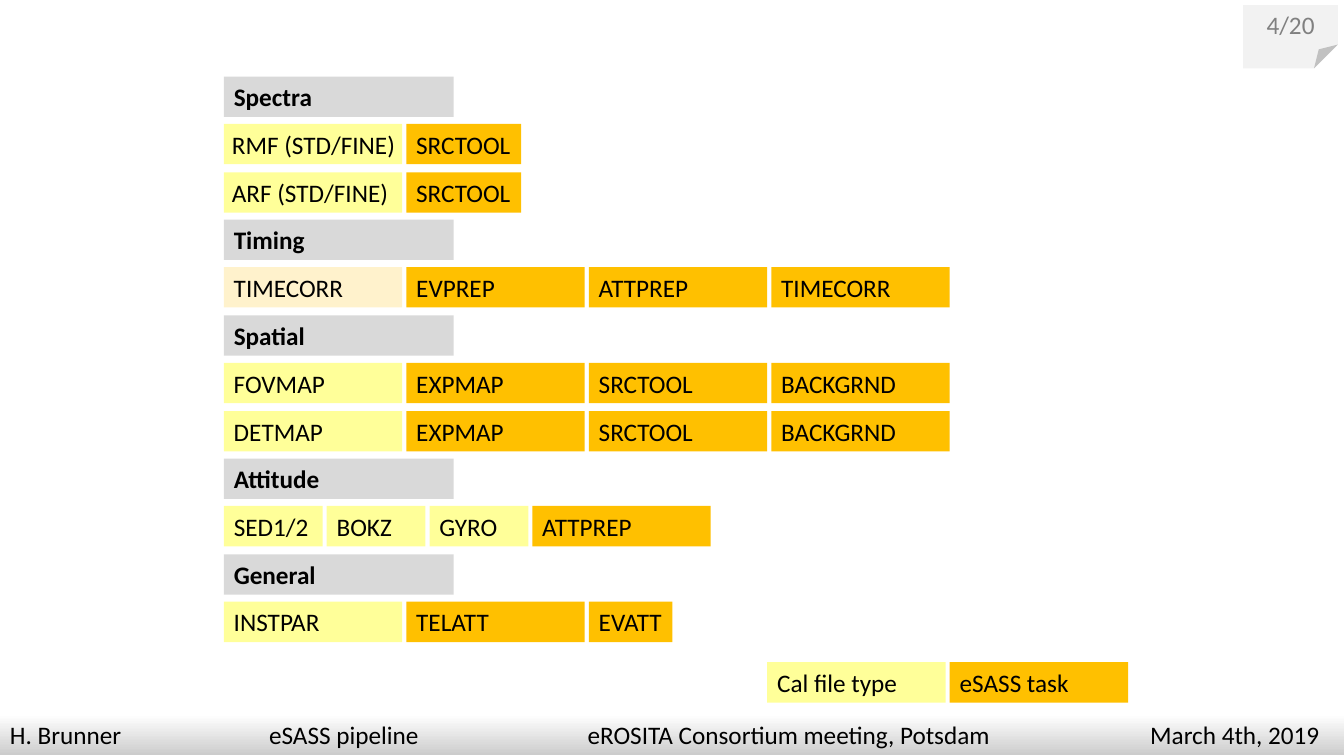
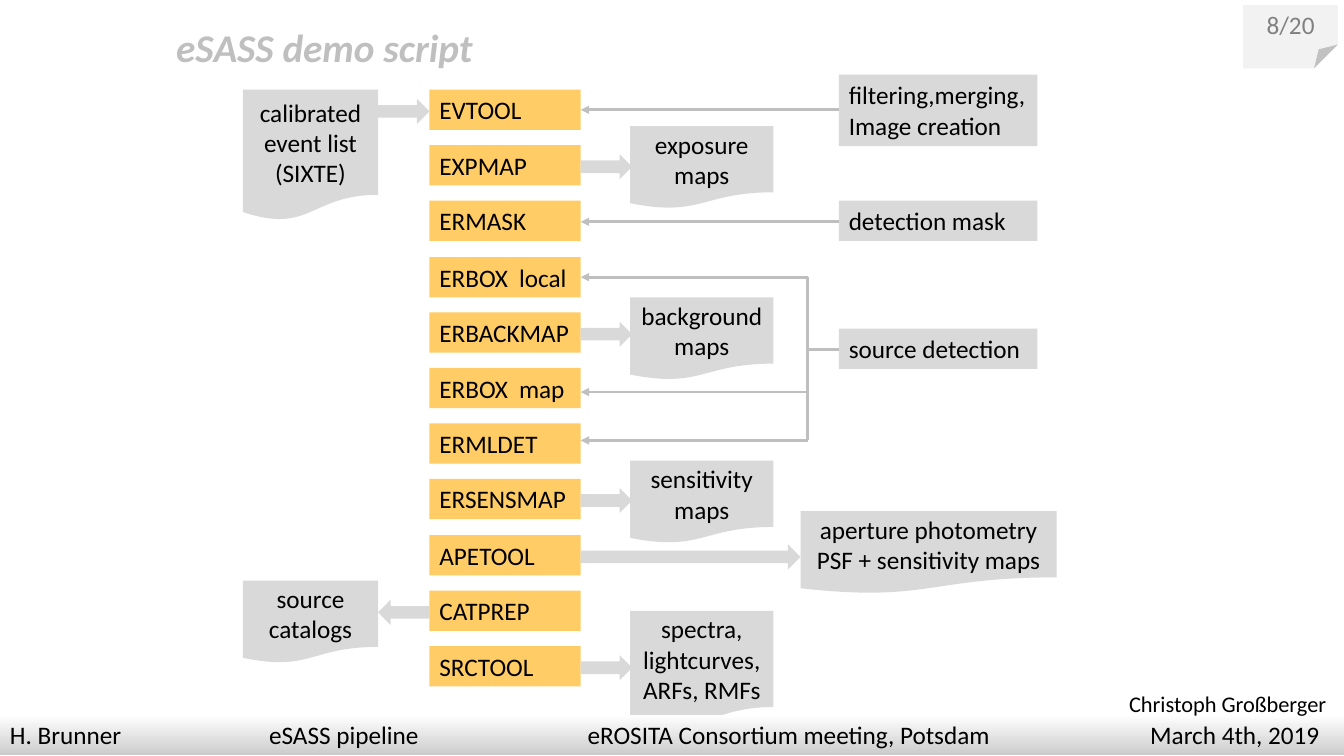
import dataclasses

import lxml.etree
import pptx
import pptx.dml.color
import pptx.enum.shapes
import pptx.enum.text
import pptx.oxml.ns
import pptx.util

PRESET = pptx.enum.shapes.MSO_SHAPE
ALIGN = pptx.enum.text.PP_ALIGN
ANCHOR = pptx.enum.text.MSO_ANCHOR
PX = 9144


@dataclasses.dataclass(frozen=True)
class Theme:
    font: str = "Calibri"
    body_size: int = 18
    title_size: int = 28
    credit_size: int = 16
    line_width: int = 2
    text: str = "000000"
    title: str = "BFBFBF"
    page_text: str = "808080"
    page_fill: str = "F2F2F2"
    band_top: str = "FFFFFF"
    band_bottom: str = "CCCCCC"
    panel: str = "D9D9D9"
    cal_file: str = "FFFF99"
    cal_file_pale: str = "FFF2CC"
    task: str = "FFC000"
    script_task: str = "FFCC66"
    connector: str = "BFBFBF"


@dataclasses.dataclass(frozen=True)
class Box:
    left: int
    top: int
    width: int
    height: int

    def inner(self, left, top, width, height):
        return Box(self.left + left, self.top + top, width, height)

    def emu(self):
        return [value * PX for value in dataclasses.astuple(self)]


THEME = Theme()
PAGE = Box(0, 0, 1333, 750)
ROW_HEIGHT = 40
CHIP_WIDTH = 177
CHIP_GAP = 4
TASK_WIDTH = 150
BLOCK_ARROW = 51

FOOTER = ("H. Brunner", "eSASS pipeline", "eROSITA Consortium meeting, Potsdam", "March 4th, 2019")
FOOTER_TABS = (257, 573, 1131)
TASK_TABS = (79,)

CALIBRATION_ROWS = (
    "Spectra",
    [("RMF (STD/FINE)", THEME.cal_file, CHIP_WIDTH, 8), ("SRCTOOL", THEME.task, 114)],
    [("ARF (STD/FINE)", THEME.cal_file, CHIP_WIDTH, 8), ("SRCTOOL", THEME.task, 114)],
    "Timing",
    [("TIMECORR", THEME.cal_file_pale), ("EVPREP", THEME.task),
     ("ATTPREP", THEME.task), ("TIMECORR", THEME.task)],
    "Spatial",
    [("FOVMAP", THEME.cal_file), ("EXPMAP", THEME.task),
     ("SRCTOOL", THEME.task), ("BACKGRND", THEME.task)],
    [("DETMAP", THEME.cal_file), ("EXPMAP", THEME.task),
     ("SRCTOOL", THEME.task), ("BACKGRND", THEME.task)],
    "Attitude",
    [("SED1/2", THEME.cal_file, 98), ("BOKZ", THEME.cal_file, 98),
     ("GYRO", THEME.cal_file, 98), ("ATTPREP", THEME.task)],
    "General",
    [("INSTPAR", THEME.cal_file), ("TELATT", THEME.task), ("EVATT", THEME.task, 83)],
)
LEGEND = [("Cal file type", THEME.cal_file), ("eSASS task", THEME.task)]

SCRIPT_TASKS = ("EVTOOL", "EXPMAP", "ERMASK", "ERBOX\tlocal", "ERBACKMAP", "ERBOX\tmap",
                "ERMLDET", "ERSENSMAP", "APETOOL", "CATPREP", "SRCTOOL")
DOCUMENTS = (
    ("calibrated event list\n(SIXTE)", (0, 0, 134, 130)),
    ("source catalogs", (0, 487, 134, 82)),
    ("exposure maps", (384, 36, 142, 82)),
    ("background maps", (384, 206, 142, 82)),
    ("sensitivity maps", (384, 368, 142, 82)),
    ("aperture photometry\nPSF + sensitivity maps", (553, 418, 254, 82)),
    ("spectra, lightcurves, ARFs, RMFs", (384, 517, 142, 119)),
)
BLOCK_ARROWS = (
    (PRESET.RIGHT_ARROW, 134, 0, BLOCK_ARROW),
    (PRESET.RIGHT_ARROW, 335, 1, BLOCK_ARROW),
    (PRESET.RIGHT_ARROW, 335, 4, BLOCK_ARROW),
    (PRESET.RIGHT_ARROW, 335, 7, BLOCK_ARROW),
    (PRESET.RIGHT_ARROW, 335, 8, 218),
    (PRESET.LEFT_ARROW, 134, 9, BLOCK_ARROW),
    (PRESET.RIGHT_ARROW, 335, 10, BLOCK_ARROW),
)
COMMENTS = (
    ("filtering,merging,\nImage creation", -15, 71),
    ("detection mask", 110, ROW_HEIGHT),
    ("source detection", 237, ROW_HEIGHT),
)
CONNECTORS = (
    (591, 20, 335, 20, True),
    (591, 131, 335, 131, True),
    (591, 258, 560, 258, False),
    (560, 186, 335, 186, True),
    (560, 300, 335, 300, True),
    (560, 348, 335, 348, True),
    (560, 186, 560, 348, False),
)


def color(value):
    return pptx.dml.color.RGBColor.from_string(value)


def add_element(parent, tag, **attributes):
    return lxml.etree.SubElement(parent, pptx.oxml.ns.qn(tag), **attributes)


def write(shape, text, size=THEME.body_size, ink=THEME.text, bold=False, italic=False,
          align=ALIGN.LEFT, anchor=ANCHOR.TOP, wrap=True, tabs=()):
    frame = shape.text_frame
    frame.word_wrap = wrap
    frame.vertical_anchor = anchor
    frame.text = text
    for paragraph in frame.paragraphs:
        paragraph.alignment = align
        if tabs:
            tab_list = add_element(paragraph._p.get_or_add_pPr(), "a:tabLst")
            for position in tabs:
                add_element(tab_list, "a:tab", pos=str(position * PX), algn="l")
        for run in paragraph.runs:
            run.font.name = THEME.font
            run.font.size = pptx.util.Pt(size)
            run.font.color.rgb = color(ink)
            run.font.bold = bold
            run.font.italic = italic


def add_block(slide, box, fill, text="", preset=PRESET.RECTANGLE, **style):
    shape = slide.shapes.add_shape(preset, *box.emu())
    shape.shadow.inherit = False
    shape.line.fill.background()
    shape.fill.solid()
    shape.fill.fore_color.rgb = color(fill)
    if text:
        write(shape, text, **style)
    return shape


def add_text(slide, box, text, **style):
    write(slide.shapes.add_textbox(*box.emu()), text, **style)


def add_line(slide, box, start_x, start_y, end_x, end_y, arrow):
    start = box.inner(start_x, start_y, 0, 0).emu()[:2]
    end = box.inner(end_x, end_y, 0, 0).emu()[:2]
    connector = slide.shapes.add_connector(
        pptx.enum.shapes.MSO_CONNECTOR.STRAIGHT, *start, *end)
    connector.line.color.rgb = color(THEME.connector)
    connector.line.width = pptx.util.Pt(THEME.line_width)
    properties = connector._element.spPr
    if arrow:
        add_element(properties.find(pptx.oxml.ns.qn("a:ln")), "a:tailEnd", type="triangle")
    add_element(properties, "a:effectLst")


def add_frame(slide, box, page_label):
    band = add_block(slide, box.inner(0, 709, box.width, ROW_HEIGHT), THEME.band_bottom,
                     "\t".join(FOOTER), tabs=FOOTER_TABS)
    band.fill.gradient()
    band.fill.gradient_angle = 270
    for stop, position, value in zip(band.fill.gradient_stops, (0, 1),
                                     (THEME.band_top, THEME.band_bottom)):
        stop.position = position
        stop.color.rgb = color(value)
    corner = add_block(slide, box.inner(1233, 5, 94, 63), THEME.page_fill, page_label,
                       PRESET.FOLDED_CORNER, ink=THEME.page_text,
                       align=ALIGN.CENTER, anchor=ANCHOR.MIDDLE)
    geometry = corner._element.spPr.find(pptx.oxml.ns.qn("a:prstGeom"))
    for guides in list(geometry):
        geometry.remove(guides)
    add_element(add_element(geometry, "a:avLst"), "a:gd", name="adj", fmla="val 37700")


def add_chips(slide, box, chips):
    left = 0
    for text, fill, *options in chips:
        width = options[0] if options else CHIP_WIDTH
        shape = add_block(slide, box.inner(left, 0, width, ROW_HEIGHT), fill, text)
        if len(options) > 1:
            shape.text_frame.margin_left = options[1] * PX
            shape.text_frame.margin_right = CHIP_GAP * PX
        left += width + CHIP_GAP


def row_top(box, index, count):
    return round(index * (box.height - ROW_HEIGHT) / (count - 1))


def add_calibration_list(slide, box):
    for index, row in enumerate(CALIBRATION_ROWS):
        top = row_top(box, index, len(CALIBRATION_ROWS))
        if isinstance(row, str):
            add_block(slide, box.inner(0, top, 228, ROW_HEIGHT), THEME.panel, row, bold=True)
        else:
            add_chips(slide, box.inner(0, top, box.width, ROW_HEIGHT), row)


def add_script_flow(slide, box):
    count = len(SCRIPT_TASKS)
    for index, task in enumerate(SCRIPT_TASKS):
        add_block(slide, box.inner(185, row_top(box, index, count), TASK_WIDTH, ROW_HEIGHT),
                  THEME.script_task, task, tabs=TASK_TABS if "\t" in task else ())
    for preset, left, row, width in BLOCK_ARROWS:
        add_block(slide, box.inner(left, row_top(box, row, count) + 9, width, 25),
                  THEME.panel, preset=preset)
    for text, place in DOCUMENTS:
        add_block(slide, box.inner(*place), THEME.panel, text, PRESET.FLOWCHART_DOCUMENT,
                  align=ALIGN.CENTER, anchor=ANCHOR.MIDDLE)
    for text, top, height in COMMENTS:
        add_block(slide, box.inner(591, top, 197, height), THEME.panel, text)
    for connector in CONNECTORS:
        add_line(slide, box, *connector)


def build_calibration_slide(slide, box):
    add_calibration_list(slide, box.inner(222, 76, 720, 561))
    add_chips(slide, box.inner(761, 657, 358, ROW_HEIGHT), LEGEND)
    add_frame(slide, box, "4/20")


def build_script_slide(slide, box):
    add_text(slide, box.inner(165, 18, 317, 57), "eSASS demo script",
             size=THEME.title_size, ink=THEME.title, bold=True, italic=True, wrap=False)
    add_script_flow(slide, box.inner(241, 89, 807, 592))
    add_frame(slide, box, "8/20")
    add_text(slide, box.inner(1110, 680, 245, 37), "Christoph Großberger",
             size=THEME.credit_size)


def main():
    presentation = pptx.Presentation()
    presentation.slide_width = PAGE.width * PX
    presentation.slide_height = PAGE.height * PX
    for build in (build_calibration_slide, build_script_slide):
        build(presentation.slides.add_slide(presentation.slide_layouts[6]), PAGE)
    presentation.save("out.pptx")


if __name__ == "__main__":
    main()
